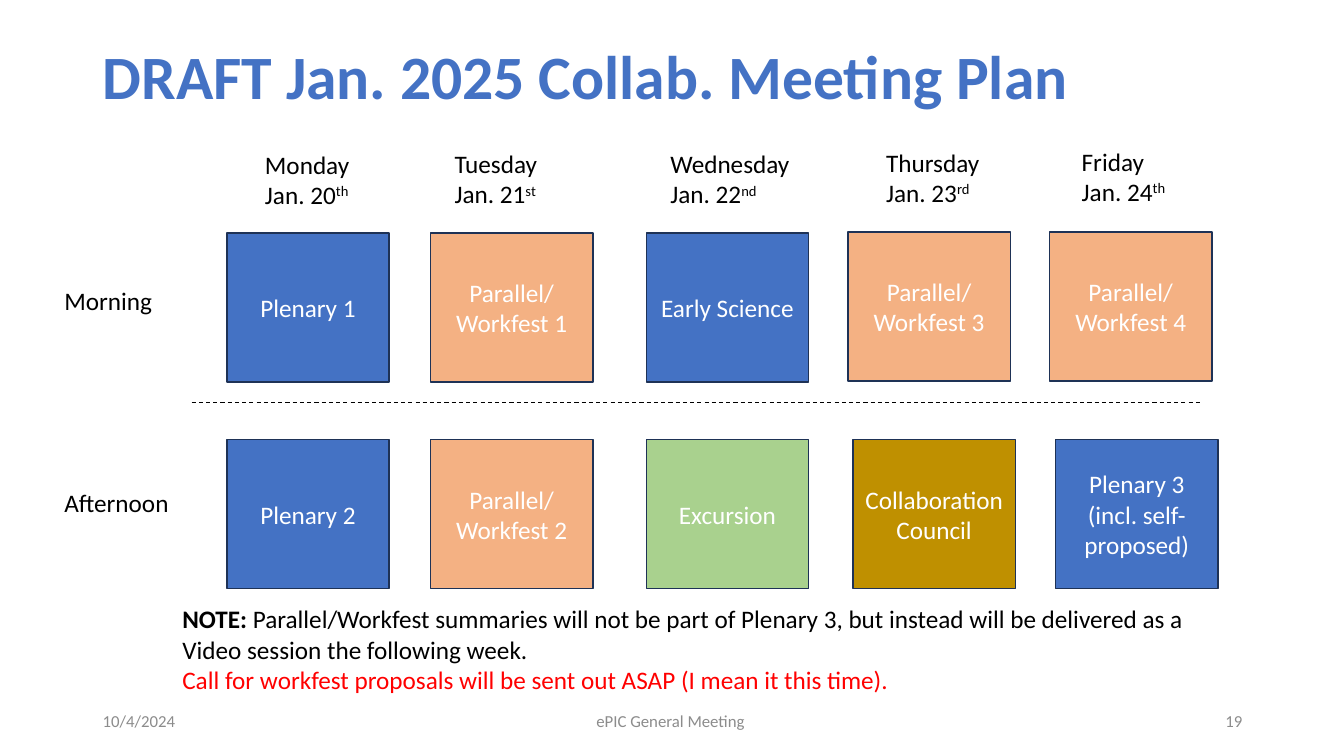
from lxml import etree
from pptx import Presentation
from pptx.dml.color import RGBColor
from pptx.enum.dml import MSO_LINE_DASH_STYLE as Dash
from pptx.enum.shapes import MSO_CONNECTOR as Connector, MSO_SHAPE as Shape
from pptx.enum.text import MSO_ANCHOR as Anchor, PP_ALIGN as Align
from pptx.oxml.ns import qn
from pptx.util import Inches, Pt

BLACK = RGBColor(0x00, 0x00, 0x00)
WHITE = RGBColor(0xFF, 0xFF, 0xFF)
RED = RGBColor(0xFF, 0x00, 0x00)
GREY = RGBColor(0x8C, 0x8C, 0x8C)
NAVY = RGBColor(0x1E, 0x32, 0x56)
BLUE = RGBColor(0x44, 0x72, 0xC4)
ORANGE = RGBColor(0xF4, 0xB1, 0x83)
GREEN = RGBColor(0xA9, 0xD1, 0x8E)
GOLD = RGBColor(0xBF, 0x90, 0x00)

# Day, date, ordinal suffix, left, top, width
DAYS = [
    ("Monday", "Jan. 20", "th", 2.53, 1.43, 1.07),
    ("Tuesday", "Jan. 21", "st", 4.41, 1.42, 1.07),
    ("Wednesday", "Jan. 22", "nd", 6.55, 1.42, 1.4),
    ("Thursday", "Jan. 23", "rd", 8.69, 1.41, 1.21),
    ("Friday", "Jan. 24", "th", 10.63, 1.4, 1.21),
]

# Paragraphs, fill, left, top; "\n" breaks a line inside a paragraph
SESSIONS = [
    (["Plenary 1"], BLUE, 2.25, 2.31),
    (["Parallel/\nWorkfest 1"], ORANGE, 4.27, 2.31),
    (["Early Science"], BLUE, 6.41, 2.31),
    (["Parallel/\nWorkfest 3"], ORANGE, 8.41, 2.3),
    (["Parallel/\nWorkfest 4"], ORANGE, 10.41, 2.3),
    (["Plenary 2"], BLUE, 2.25, 4.36),
    (["Parallel/\nWorkfest 2"], ORANGE, 4.27, 4.36),
    (["Excursion"], GREEN, 6.41, 4.36),
    (["Collaboration Council"], GOLD, 8.46, 4.36),
    (["Plenary 3", "(incl. self-proposed)"], BLUE, 10.47, 4.36),
]


def write_text(frame, paragraphs, size=18, color=BLACK, bold=False,
               align=Align.LEFT, anchor=Anchor.TOP, spacing=None):
    """Fill a frame; a paragraph is a string or a list of (text, changes)."""
    frame.word_wrap = True
    frame.vertical_anchor = anchor
    for index, content in enumerate(paragraphs):
        paragraph = frame.add_paragraph() if index else frame.paragraphs[0]
        paragraph.alignment = align
        if spacing:
            paragraph.line_spacing = spacing
        pieces = [(content, {})] if isinstance(content, str) else content
        for text, changes in pieces:
            for number, line in enumerate(text.split("\n")):
                if number:
                    paragraph.add_line_break()
                run = paragraph.add_run()
                run.text = line
                run.font.name = "Calibri"
                run.font.size = Pt(size)
                run.font.bold = changes.get("bold", bold)
                run.font.color.rgb = changes.get("color", color)
                if changes.get("raised"):
                    run.font._element.set("baseline", "30000")


def add_label(slide, paragraphs, left, top, width, height, **text_format):
    label = slide.shapes.add_textbox(
        Inches(left), Inches(top), Inches(width), Inches(height))
    write_text(label.text_frame, paragraphs, **text_format)


def add_session(slide, paragraphs, fill, left, top):
    session = slide.shapes.add_shape(
        Shape.RECTANGLE, Inches(left), Inches(top), Inches(1.61), Inches(1.48))
    session.shadow.inherit = False
    session.fill.solid()
    session.fill.fore_color.rgb = fill
    session.line.color.rgb = NAVY
    session.line.width = Pt(1)
    write_text(session.text_frame, paragraphs, color=WHITE,
               align=Align.CENTER, anchor=Anchor.MIDDLE)


def add_divider(slide, left, right, y):
    divider = slide.shapes.add_connector(
        Connector.STRAIGHT, Inches(left), Inches(y), Inches(right), Inches(y))
    divider.line.color.rgb = BLACK
    divider.line.width = Pt(0.75)
    divider.line.dash_style = Dash.DASH
    etree.SubElement(divider._element.spPr, qn("a:effectLst"))


def main():
    deck = Presentation()
    deck.slide_width, deck.slide_height = Inches(13.33), Inches(7.5)
    slide = deck.slides.add_slide(deck.slide_layouts[6])

    # Title
    add_label(slide, ["DRAFT Jan. 2025 Collab. Meeting Plan"],
              0.92, 0.2, 11.5, 1.18, size=44, color=BLUE, bold=True,
              anchor=Anchor.MIDDLE, spacing=0.9)

    # Halves of the day
    for half, top in (("Morning", 2.78), ("Afternoon", 4.79)):
        add_label(slide, [half], 0.54, top, 1.73, 0.4)
    add_divider(slide, 1.9, 11.91, 3.99)

    # Day headings
    for day, date, suffix, left, top, width in DAYS:
        add_label(slide, [day, [(date, {}), (suffix, {"raised": True})]],
                  left, top, width, 0.71)

    # Sessions
    for session in SESSIONS:
        add_session(slide, *session)

    # Note
    note = [
        ("NOTE:", {"bold": True}),
        (" Parallel/Workfest summaries will not be part of Plenary 3, but "
         "instead will be delivered as a Video session the following week.", {}),
    ]
    call = [("Call for workfest proposals will be sent out ASAP "
             "(I mean it this time).", {"color": RED})]
    add_label(slide, [note, call], 1.71, 5.94, 10.32, 1.01)

    # Footer
    for text, left, width, align in (
            ("10/4/2024", 0.92, 3, Align.LEFT),
            ("ePIC General Meeting ", 4.42, 4.5, Align.CENTER),
            ("19", 9.42, 3, Align.RIGHT)):
        add_label(slide, [text], left, 6.95, width, 0.4, size=12, color=GREY,
                  align=align, anchor=Anchor.MIDDLE)

    deck.save("out.pptx")


if __name__ == "__main__":
    main()
